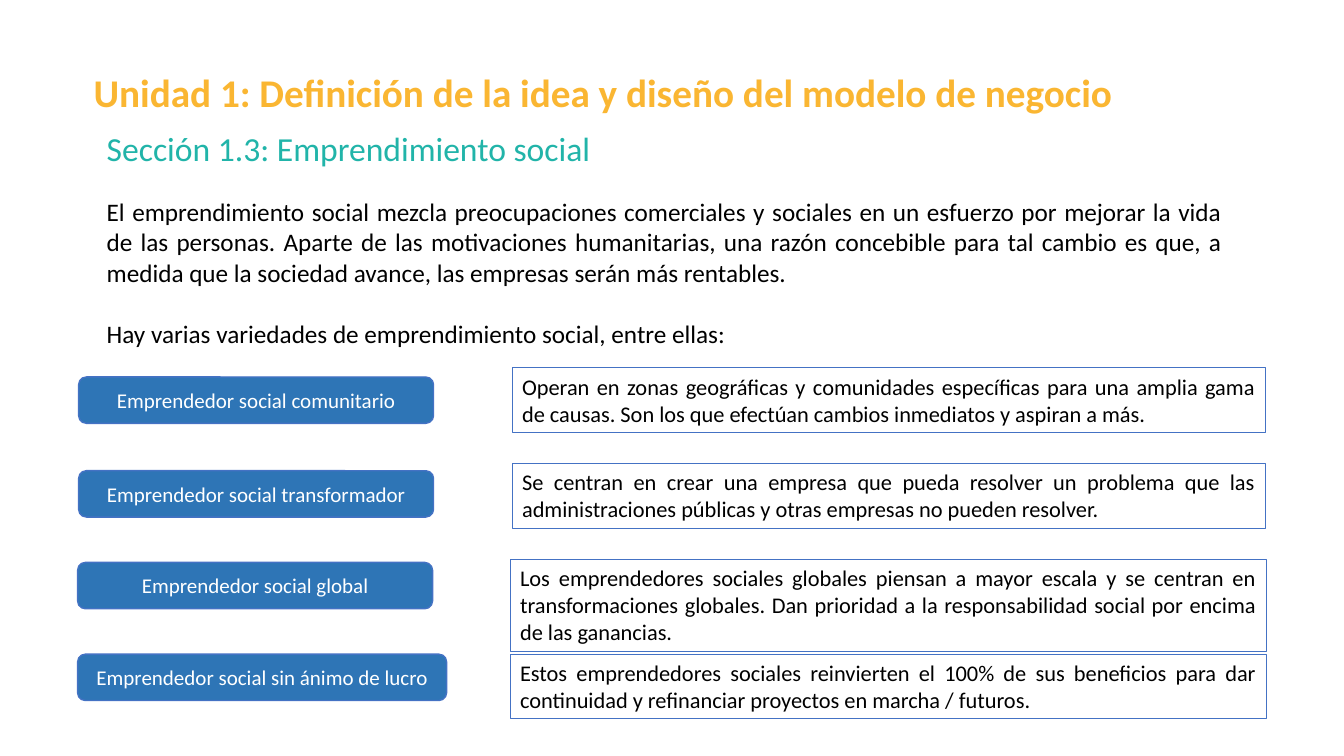
from pptx import Presentation
from pptx.dml.color import RGBColor
from pptx.enum.shapes import MSO_SHAPE as Shape
from pptx.enum.text import MSO_ANCHOR as Anchor, PP_ALIGN as Align
from pptx.util import Emu, Pt

PX = 9144
COLORS = {
    "title": "FAB632",
    "section": "21B4A9",
    "text": "000000",
    "label": "FFFFFF",
    "label_fill": "2E75B6",
    "border": "4472C4",
}
TITLE = "Unidad 1: Definición de la idea y diseño del modelo de negocio"
SECTION = "Sección 1.3: Emprendimiento social"
INTRO = [
    "El emprendimiento social mezcla preocupaciones comerciales y sociales en un esfuerzo por mejorar la vida "
    "de las personas. Aparte de las motivaciones humanitarias, una razón concebible para tal cambio es que, a "
    "medida que la sociedad avance, las empresas serán más rentables.",
    "Hay varias variedades de emprendimiento social, entre ellas:",
]
ENTREPRENEURS = [
    ("Emprendedor social comunitario", (78, 374, 352, 46),
     "Operan en zonas geográficas y comunidades específicas para una amplia gama de causas. "
     "Son los que efectúan cambios inmediatos y aspiran a más.", (508, 365, 747, 64)),
    ("Emprendedor social transformador", (78, 467, 352, 46),
     "Se centran en crear una empresa que pueda resolver un problema que las "
     "administraciones públicas y otras empresas no pueden resolver.", (508, 460, 747, 64)),
    ("Emprendedor social global", (77, 558, 352, 46),
     "Los emprendedores sociales globales piensan a mayor escala y se centran en transformaciones globales. "
     "Dan prioridad a la responsabilidad social por encima de las ganancias.", (506, 555, 750, 91)),
    ("Emprendedor social sin ánimo de lucro", (77, 649, 366, 46),
     "Estos emprendedores sociales reinvierten el 100% de sus beneficios para dar continuidad "
     "y refinanciar proyectos en marcha / futuros.", (506, 649, 750, 64)),
]


def color(name):
    return RGBColor.from_string(COLORS[name])


def emu(box):
    return [Emu(length * PX) for length in box]


def write(shape, texts, size, ink, align=Align.LEFT, bold=False, gap=0):
    frame = shape.text_frame
    frame.word_wrap = True
    for index, text in enumerate(texts):
        para = frame.add_paragraph() if index else frame.paragraphs[0]
        para.text = text
        para.alignment = align
        para.space_before = Pt(gap if index else 0)
        para.font.name = "Calibri"
        para.font.size = Pt(size)
        para.font.bold = bold
        para.font.color.rgb = color(ink)


def add_text(page, box, texts, size, ink, **style):
    text_box = page.shapes.add_textbox(*emu(box))
    write(text_box, texts, size, ink, **style)
    return text_box


def add_border(shape, width):
    shape.line.color.rgb = color("border")
    shape.line.width = Pt(width)


def add_label(page, box, text):
    label = page.shapes.add_shape(Shape.ROUNDED_RECTANGLE, *emu(box))
    label.shadow.inherit = False
    label.fill.solid()
    label.fill.fore_color.rgb = color("label_fill")
    add_border(label, 1)
    write(label, [text], 15, "label", align=Align.CENTER)
    label.text_frame.vertical_anchor = Anchor.MIDDLE


def add_description(page, box, text):
    description = add_text(page, box, [text], 16, "text", align=Align.JUSTIFY)
    add_border(description, 0.75)


def add_heading(page):
    add_text(page, (83, 63, 1138, 57), [TITLE], 28, "title", bold=True)
    add_text(page, (96, 122, 841, 50), [SECTION], 24, "section")


def main():
    deck = Presentation()
    deck.slide_width, deck.slide_height = emu((1333, 750))
    page = deck.slides.add_slide(deck.slide_layouts[6])
    add_heading(page)
    add_text(page, (96, 190, 1126, 162), INTRO, 18, "text", align=Align.JUSTIFY, gap=22)
    for name, label_box, summary, summary_box in ENTREPRENEURS:
        add_label(page, label_box, name)
        add_description(page, summary_box, summary)
    deck.save("out.pptx")


if __name__ == "__main__":
    main()
